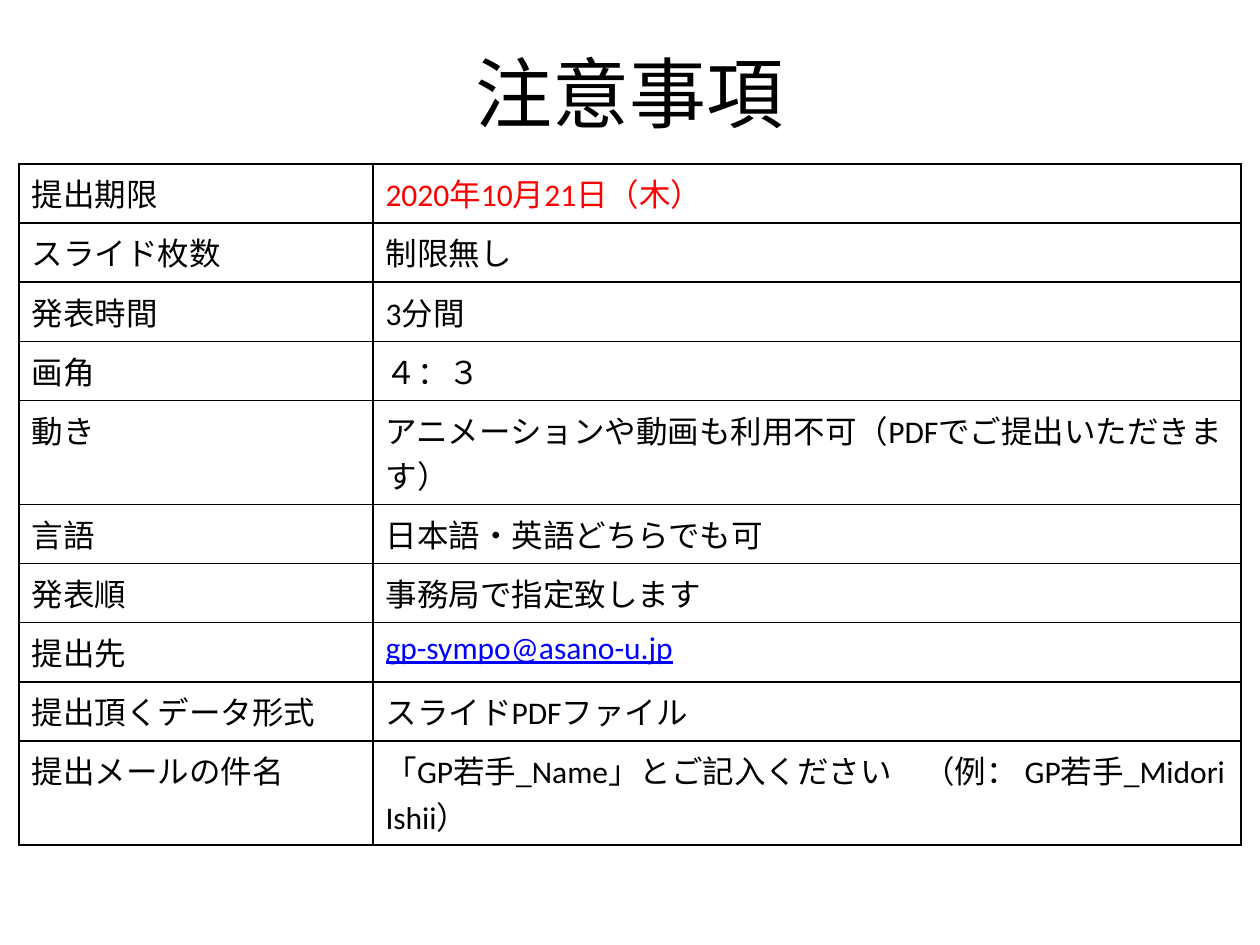
from lxml.etree import SubElement
from pptx import Presentation
from pptx.dml.color import RGBColor
from pptx.enum.text import MSO_ANCHOR, PP_ALIGN
from pptx.oxml import parse_xml
from pptx.oxml.ns import nsdecls, qn
from pptx.util import Inches, Pt

BLACK = RGBColor(0x00, 0x00, 0x00)
RED = RGBColor(0xFF, 0x00, 0x00)
BLUE = RGBColor(0x00, 0x00, 0xFF)
LATIN = "Calibri"
JAPANESE = "Noto Sans CJK JP"

ROWS = [
    ("提出期限", "2020年10月21日（木）"),
    ("スライド枚数", "制限無し"),
    ("発表時間", "3分間"),
    ("画角", "４：３"),
    ("動き", "アニメーションや動画も利用不可（PDFでご提出いただきます）"),
    ("言語", "日本語・英語どちらでも可"),
    ("発表順", "事務局で指定致します"),
    ("提出先", "gp-sympo@asano-u.jp"),
    ("提出頂くデータ形式", "スライドPDFファイル"),
    ("提出メールの件名", "「GP若手_Name」とご記入ください　（例： GP若手_Midori Ishii）"),
]
COLUMN_WIDTHS = (2.81, 6.89)
ROW_HEIGHT = 0.47
TALL_ROWS = {"動き": 0.7}
VALUE_COLORS = {"提出期限": RED, "提出先": BLUE}


class SlideBuilder:
    def __init__(self, prs):
        self.s = prs.slides.add_slide(prs.slide_layouts[5])

    def add_run(self, p, text, size, font, color=BLACK):
        r = p.add_run()
        r.text = text
        r.font.size = Pt(size)
        r.font.name = font
        r.font.color.rgb = color
        return r

    def title(self, text, left, top, width, height):
        sp = self.s.shapes.title
        sp.left, sp.top = Inches(left), Inches(top)
        sp.width, sp.height = Inches(width), Inches(height)
        tf = sp.text_frame
        tf.vertical_anchor = MSO_ANCHOR.MIDDLE
        p = tf.paragraphs[0]
        p.alignment = PP_ALIGN.CENTER
        r = self.add_run(p, text, 44, JAPANESE)
        SubElement(r.font._element, qn("a:ea"), typeface=JAPANESE)

    def borders(self, cell):
        tc_pr = cell._tc.get_or_add_tcPr()
        for i, side in enumerate(("lnL", "lnR", "lnT", "lnB")):
            tc_pr.insert(i, parse_xml(
                f'<a:{side} {nsdecls("a")} w="{Pt(1)}"><a:solidFill>'
                f'<a:srgbClr val="{BLACK}"/></a:solidFill></a:{side}>'))

    def cell(self, cell, text, color=BLACK):
        cell.fill.background()
        self.borders(cell)
        p = cell.text_frame.paragraphs[0]
        r = self.add_run(p, text, 18, LATIN, color)
        if color == BLUE:
            r.font.underline = True

    def table(self, rows, left, top):
        heights = [TALL_ROWS.get(label, ROW_HEIGHT) for label, _ in rows]
        table = self.s.shapes.add_table(
            len(rows), len(COLUMN_WIDTHS), Inches(left), Inches(top),
            Inches(sum(COLUMN_WIDTHS)), Inches(sum(heights))).table
        table.first_row = False
        table.horz_banding = False
        for column, width in zip(table.columns, COLUMN_WIDTHS):
            column.width = Inches(width)
        for i, (label, value) in enumerate(rows):
            table.rows[i].height = Inches(heights[i])
            self.cell(table.cell(i, 0), label)
            self.cell(table.cell(i, 1), value, VALUE_COLORS.get(label, BLACK))


def main():
    prs = Presentation()
    prs.slide_width, prs.slide_height = Inches(10), Inches(7.5)
    slide = SlideBuilder(prs)
    slide.title("注意事項", 0.5, 0.1, 9, 1.25)
    slide.table(ROWS, 0.15, 1.3)
    prs.save("out.pptx")


if __name__ == "__main__":
    main()
